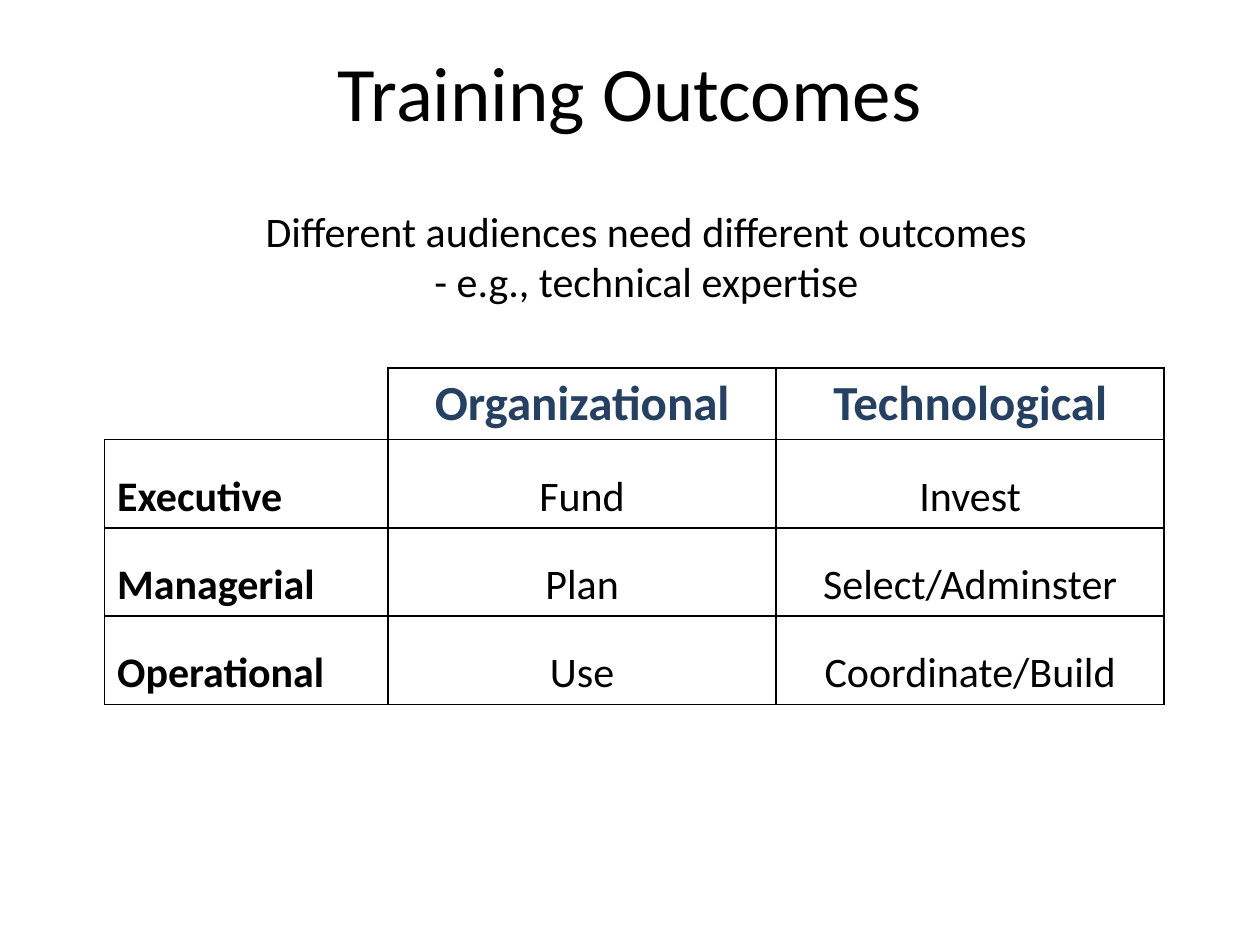
from lxml import etree
from pptx import Presentation
from pptx.dml.color import RGBColor
from pptx.enum.text import MSO_ANCHOR, PP_ALIGN
from pptx.oxml.ns import qn
from pptx.util import Inches, Pt

COLORS = {"text": "000000", "heading": "254061", "border": "000000"}


def style(p, size, color="text", bold=False, align=PP_ALIGN.CENTER):
    p.alignment = align
    for r in p.runs:
        r.font.name = "Calibri"
        r.font.size = Pt(size)
        r.font.bold = bold
        r.font.color.rgb = RGBColor.from_string(COLORS[color])


def set_borders(cell, shown):
    tc_pr = cell._tc.get_or_add_tcPr()
    for i, side in enumerate("LRTB"):
        ln = etree.Element(qn(f"a:ln{side}"), w=str(Pt(1)))
        if side in shown:
            fill = etree.SubElement(ln, qn("a:solidFill"))
            etree.SubElement(fill, qn("a:srgbClr"), val=COLORS["border"])
        else:
            etree.SubElement(ln, qn("a:noFill"))
        tc_pr.insert(i, ln)


prs = Presentation()
prs.slide_width, prs.slide_height = Inches(10), Inches(7.5)
s = prs.slides.add_slide(prs.slide_layouts[5])

# Title
title = s.shapes.title
title.left, title.top = Inches(0.5), Inches(0.3)
title.width, title.height = Inches(9), Inches(1.25)
tf = title.text_frame
tf.text = "Training Outcomes"
tf.vertical_anchor = MSO_ANCHOR.TOP
style(tf.paragraphs[0], 44)

# Introduction
intro = s.shapes.add_textbox(Inches(0.92), Inches(1.58), Inches(8.42), Inches(0.91))
tf = intro.text_frame
tf.word_wrap = True
tf.text = "Different audiences need different outcomes\n- e.g., technical expertise"
for p in tf.paragraphs:
    style(p, 24)

# Outcomes by audience
rows = [
    ("", "Organizational", "Technological"),
    ("Executive", "Fund", "Invest"),
    ("Managerial", "Plan", "Select/Adminster"),
    ("Operational", "Use", "Coordinate/Build"),
]
col_widths = [2.25, 3.08, 3.08]
row_heights = [0.57, 0.7, 0.7, 0.7]
table = s.shapes.add_table(
    len(rows), len(col_widths), Inches(0.83), Inches(2.92),
    Inches(sum(col_widths)), Inches(sum(row_heights)),
).table
table.first_row = table.horz_banding = False
for col, width in zip(table.columns, col_widths):
    col.width = Inches(width)
for row, height in zip(table.rows, row_heights):
    row.height = Inches(height)

for i, row in enumerate(rows):
    for j, text in enumerate(row):
        cell = table.cell(i, j)
        cell.fill.background()
        set_borders(cell, "LRTB" if text else "RB")
        cell.text = text
        p = cell.text_frame.paragraphs[0]
        if i == 0:
            style(p, 28, "heading", bold=True)
        else:
            style(p, 24, bold=j == 0, align=PP_ALIGN.CENTER if j else PP_ALIGN.LEFT)
            p.line_spacing = 1.5
            p.space_after = Pt(12)

prs.save("out.pptx")
